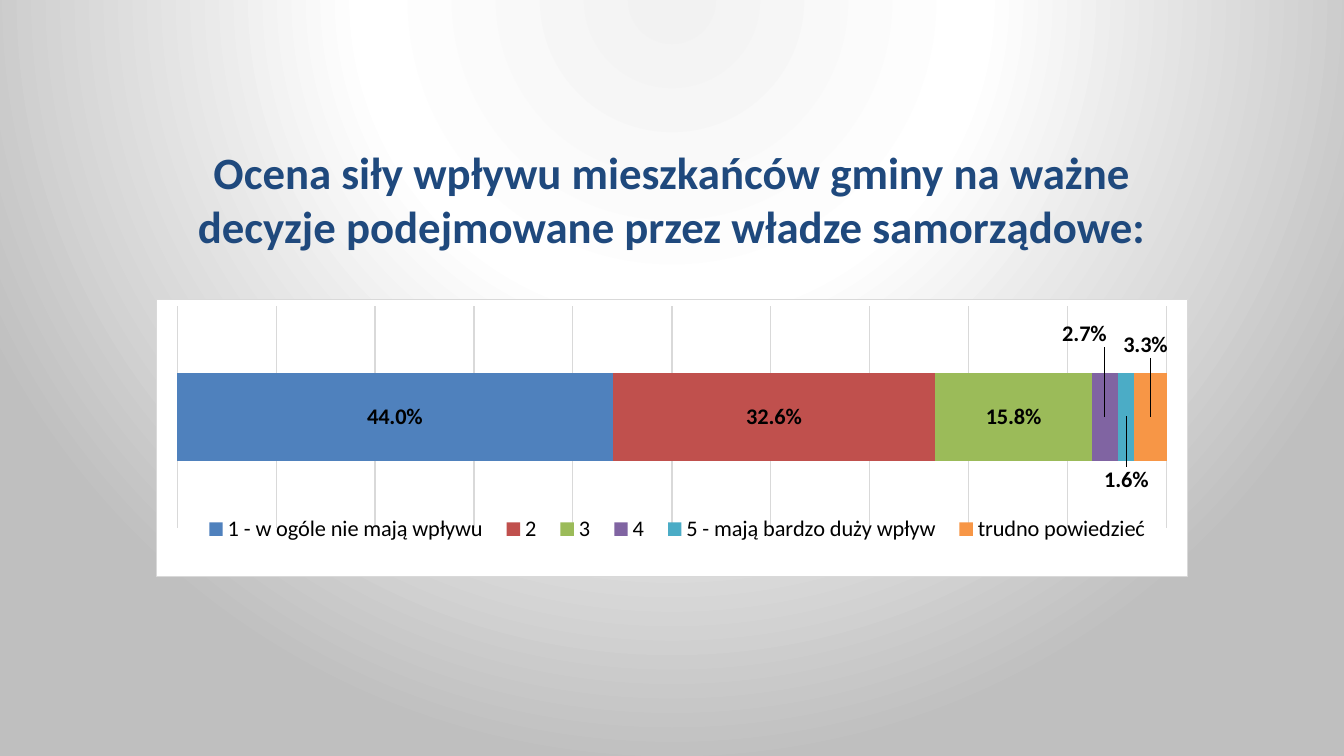
from dataclasses import dataclass

from pptx import Presentation, util as u
from pptx.chart.data import CategoryChartData
from pptx.dml.color import RGBColor
from pptx.enum import chart as ch, text
from pptx.oxml import parse_xml
from pptx.oxml.ns import nsdecls, qn


@dataclass(frozen=True)
class Theme:
    font: str = "Calibri"
    head: str = "1F497D"
    ink: str = "000000"
    grid: str = "D9D9D9"
    panel: str = "FFFFFF"
    glow: tuple = ((0, "F2F2F2"), (40, "FFFFFF"), (100, "BFBFBF"))
    big: int = 32
    small: int = 16
    hair: float = 0.75


THEME = Theme()
WIDE, HIGH = 13.33, 7.5
PERCENT = "0.0%"

# Name, share, colour, shift of the label as a share of the chart's size
ANSWERS = [
    ("1 - w ogóle nie mają wpływu", 0.44, "4F81BD", None),
    ("2", 0.326, "C0504D", None),
    ("3", 0.158, "9BBB59", None),
    ("4", 0.027, "8064A2", (-0.02, -0.3)),
    ("5 - mają bardzo duży wpływ", 0.016, "4BACC6", (0, 0.23)),
    ("trudno powiedzieć", 0.033, "F79646", (-0.005, -0.26)),
]


def box(left, top, width, height):
    """Turn shares of the slide into lengths."""
    sizes = (left * WIDE, top * HIGH, width * WIDE, height * HIGH)
    return [u.Inches(size) for size in sizes]


def style(font, size=THEME.small, color=THEME.ink, bold=False):
    font.name = THEME.font
    font.size = u.Pt(size)
    font.bold = bold
    font.color.rgb = RGBColor.from_string(color)


def write(frame, words, align=text.PP_ALIGN.CENTER,
          anchor=text.MSO_ANCHOR.TOP, **look):
    frame.text = words
    frame.word_wrap = True
    frame.auto_size = text.MSO_AUTO_SIZE.NONE
    frame.vertical_anchor = anchor
    para = frame.paragraphs[0]
    para.alignment = align
    style(para.runs[0].font, **look)


def layout(x, y, w=None, h=None, inner=False):
    """Build a manual chart layout; without a size, x and y are a shift."""
    parts = [("layoutTarget", "inner")] if inner else []
    if w:
        parts += [("xMode", "edge"), ("yMode", "edge")]
    parts += [("x", x), ("y", y)]
    if w:
        parts += [("w", w), ("h", h)]
    body = "".join(f'<c:{tag} val="{val}"/>' for tag, val in parts)
    return parse_xml(f'<c:layout {nsdecls("c")}><c:manualLayout>{body}'
                     '</c:manualLayout></c:layout>')


def paint(slide):
    """Fill the background with a round glow from above the slide."""
    slide.background.fill.gradient()
    stops = "".join(f'<a:gs pos="{pos * 1000}"><a:srgbClr val="{color}"/></a:gs>'
                    for pos, color in THEME.glow)
    glow = parse_xml(
        f'<a:gradFill {nsdecls("a")} rotWithShape="1"><a:gsLst>{stops}</a:gsLst>'
        '<a:path path="circle"><a:fillToRect l="50000" t="-80000" r="50000" '
        'b="180000"/></a:path></a:gradFill>')
    old = slide.element.find(".//" + qn("a:gradFill"))
    old.getparent().replace(old, glow)


def frame(chart):
    """Give the chart its panel and place its plot and legend."""
    root = chart.element.find(qn("c:chart"))
    root.addnext(parse_xml(
        f'<c:spPr {nsdecls("c", "a")}><a:solidFill><a:srgbClr val="{THEME.panel}"/>'
        f'</a:solidFill><a:ln w="{u.Pt(THEME.hair)}"><a:solidFill>'
        f'<a:srgbClr val="{THEME.grid}"/></a:solidFill></a:ln></c:spPr>'))
    area = root.find(qn("c:plotArea"))
    for old in area.findall(qn("c:layout")):
        area.remove(old)
    area.insert(0, layout(0.02, 0.025, 0.96, 0.8, inner=True))

    chart.has_legend = True
    chart.legend.position = ch.XL_LEGEND_POSITION.BOTTOM
    chart.legend.include_in_layout = False
    style(chart.legend.font)
    key = root.find(qn("c:legend"))
    for old in key.findall(qn("c:layout")):
        key.remove(old)
    key.find(qn("c:legendPos")).addnext(layout(0.035, 0.77, 0.94, 0.12))


def scale(chart):
    chart.category_axis.visible = False
    axis = chart.value_axis
    axis.visible = False
    axis.minimum_scale, axis.maximum_scale, axis.major_unit = 0, 1, 0.1
    axis.tick_labels.number_format = PERCENT
    axis.has_major_gridlines = True
    line = axis.major_gridlines.format.line
    line.width = u.Pt(THEME.hair)
    line.color.rgb = RGBColor.from_string(THEME.grid)


def label(chart, series, color, shift):
    series.format.fill.solid()
    series.format.fill.fore_color.rgb = RGBColor.from_string(color)
    tags = series.data_labels
    tags.show_value = True
    tags.number_format = PERCENT
    tags.number_format_is_linked = False
    style(tags.font, bold=True)
    if shift:
        style(series.points[0].data_label.font, bold=True)
        moved = chart.element.xpath(".//c:dLbl")[-1]
        moved.find(qn("c:idx")).addnext(layout(*shift))


def draw(slide, place):
    data = CategoryChartData(number_format=PERCENT)
    data.categories = ["1"]
    for name, share, *_ in ANSWERS:
        data.add_series(name, [share])
    chart = slide.shapes.add_chart(ch.XL_CHART_TYPE.BAR_STACKED, *place, data).chart
    chart.has_title = False
    style(chart.font)
    plot = chart.plots[0]
    plot.gap_width, plot.overlap, plot.vary_by_categories = 150, 100, False
    for series, (_, _, color, shift) in zip(plot.series, ANSWERS):
        label(chart, series, color, shift)
    scale(chart)
    frame(chart)


def main():
    deck = Presentation()
    deck.slide_width, deck.slide_height = u.Inches(WIDE), u.Inches(HIGH)
    slide = deck.slides.add_slide(deck.slide_layouts[5])
    paint(slide)
    title = slide.shapes.title
    title.left, title.top, title.width, title.height = box(0.125, 0.185, 0.75, 0.21)
    write(title.text_frame,
          "Ocena siły wpływu mieszkańców gminy na ważne decyzje "
          "podejmowane przez władze samorządowe:",
          size=THEME.big, color=THEME.head, bold=True)
    draw(slide, box(0.116, 0.395, 0.768, 0.368))
    deck.save("out.pptx")


if __name__ == "__main__":
    main()
